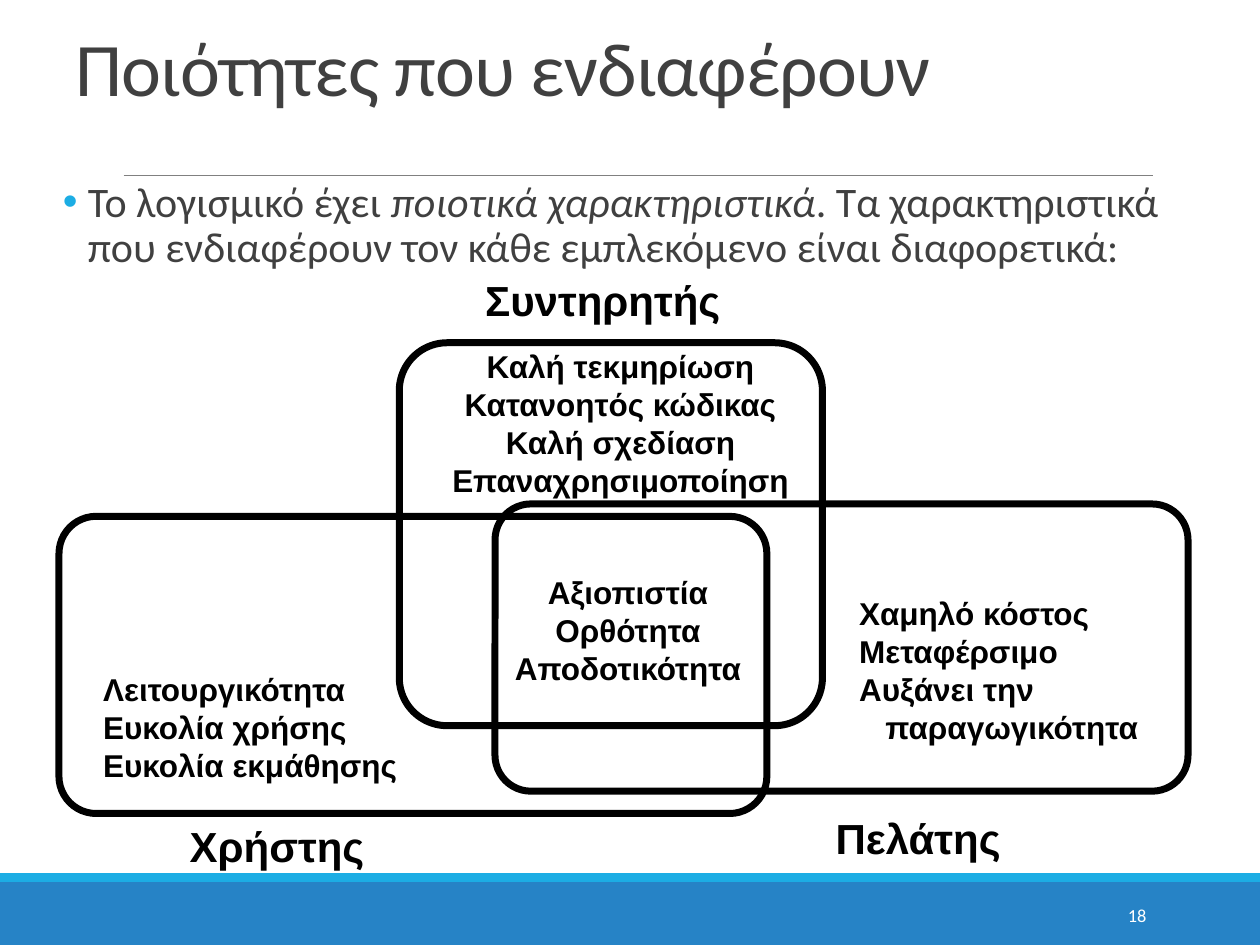
from pptx import Presentation
from pptx.dml.color import RGBColor
from pptx.enum import shapes as sh, text as tx
from pptx.oxml import parse_xml
from pptx.oxml.ns import nsdecls
from pptx.util import Cm, Pt

BLACK = RGBColor(0x00, 0x00, 0x00)
WHITE = RGBColor(0xFF, 0xFF, 0xFF)
DARK = RGBColor(0x40, 0x40, 0x40)
GREY = RGBColor(0x80, 0x80, 0x80)
BLUE = RGBColor(0x26, 0x83, 0xC6)
CYAN = RGBColor(0x1C, 0xAD, 0xE4)
LEFT, CENTER, RIGHT = tx.PP_ALIGN.LEFT, tx.PP_ALIGN.CENTER, tx.PP_ALIGN.RIGHT

prs = Presentation()
prs.slide_width, prs.slide_height = Cm(25.4), Cm(19.05)
slide = prs.slides.add_slide(prs.slide_layouts[6])


def add_text(box, lines, size, font="Arial", color=BLACK, bold=False,
             align=LEFT, anchor=tx.MSO_ANCHOR.TOP, wrap=False):
    """Each line is a list of (words, italic) runs."""
    frame = slide.shapes.add_textbox(*map(Cm, box)).text_frame
    frame.word_wrap = wrap
    if not wrap:
        frame.auto_size = tx.MSO_AUTO_SIZE.SHAPE_TO_FIT_TEXT
    frame.vertical_anchor = anchor
    for i, runs in enumerate(lines):
        para = frame.add_paragraph() if i else frame.paragraphs[0]
        para.alignment = align
        for words, italic in runs:
            run = para.add_run()
            run.text = words
            run.font.name, run.font.size = font, Pt(size)
            run.font.bold, run.font.italic = bold, italic
            run.font.color.rgb = color
    return frame


# Footer bands
for top, height, color in ((17.78, 1.27, BLUE), (17.6, 0.18, CYAN)):
    band = slide.shapes.add_shape(sh.MSO_SHAPE.RECTANGLE, 0, Cm(top),
                                  prs.slide_width, Cm(height))
    band.shadow.inherit = False
    band.fill.solid()
    band.fill.fore_color.rgb = color
    band.line.fill.background()

# Rule under the title
rule = slide.shapes.add_connector(sh.MSO_CONNECTOR.STRAIGHT, Cm(2.49), Cm(3.53),
                                  Cm(23.24), Cm(3.53))
rule.line.color.rgb = GREY
rule.line.width = Pt(0.5)
rule._element.spPr.append(parse_xml(f"<a:effectLst {nsdecls('a')}/>"))

# Title
title = add_text((1.27, 0.76, 22.86, 1.63), [[("Ποιότητες που ενδιαφέρουν", False)]],
                 43.2, "Calibri", DARK, anchor=tx.MSO_ANCHOR.BOTTOM, wrap=True)
title.paragraphs[0].line_spacing = 0.85
title.paragraphs[0].runs[0].font._element.set("spc", "-50")

# Bulleted statement
statement = add_text(
    (1.27, 3.53, 22.86, 2.18),
    [[("Το λογισμικό έχει ", False),
      ("ποιοτικά χαρακτηριστικά", True),
      (". Τα χαρακτηριστικά που ενδιαφέρουν τον κάθε εμπλεκόμενο είναι διαφορετικά:",
       False)]],
    24, "Calibri", DARK, wrap=True)
statement.margin_left = statement.margin_right = 0
bullet = statement.paragraphs[0]
bullet.line_spacing = 0.9
bullet.space_before, bullet.space_after = Pt(12), Pt(2)
bullet_props = bullet._p.get_or_add_pPr()
bullet_props.set("marL", str(Cm(0.5)))
bullet_props.set("indent", str(-Cm(0.5)))
for xml in (f'<a:buClr {nsdecls("a")}><a:srgbClr val="{CYAN}"/></a:buClr>',
            f'<a:buFont {nsdecls("a")} typeface="Arial"/>',
            f'<a:buChar {nsdecls("a")} char="•"/>'):
    bullet_props.append(parse_xml(xml))

# Slide number
add_text((20.62, 17.93, 2.74, 1.02), [[("18", False)]], 10.5, "Calibri", WHITE,
         align=RIGHT, anchor=tx.MSO_ANCHOR.MIDDLE, wrap=True)

# Overlapping areas: maintainer, customer, user
for box in ((8.05, 6.91, 8.53, 7.72), (9.98, 10.16, 13.97, 5.79),
            (1.19, 10.41, 14.27, 5.99)):
    area = slide.shapes.add_shape(sh.MSO_SHAPE.ROUNDED_RECTANGLE, *map(Cm, box))
    area.adjustments[0] = 0.125
    area.shadow.inherit = False
    area.fill.background()
    area.line.color.rgb = BLACK
    area.line.width = Pt(4)

# Names of the stakeholders
for name, box, align in (("Συντηρητής", (9.53, 5.41, 5.26, 1.27), LEFT),
                         ("Πελάτης", (16.54, 16.26, 3.94, 1.27), CENTER),
                         ("Χρήστης", (3.53, 16.41, 4.11, 1.27), CENTER)):
    add_text(box, [[(name, False)]], 24, bold=True, align=align)

# Qualities each one cares about, with the shared ones in the middle
qualities = (
    ((8.84, 6.88, 7.34, 3.3), CENTER,
     ("Καλή τεκμηρίωση", "Κατανοητός κώδικας", "Καλή σχεδίαση", "Επαναχρησιμοποίηση")),
    ((17.07, 11.86, 6.2, 3.3), LEFT,
     ("Χαμηλό κόστος", "Μεταφέρσιμο", "Αυξάνει την", "παραγωγικότητα")),
    ((10.08, 11.43, 5.16, 2.54), CENTER,
     ("Αξιοπιστία", "Ορθότητα", "Αποδοτικότητα")),
    ((1.83, 13.39, 6.45, 2.54), LEFT,
     ("Λειτουργικότητα", "Ευκολία χρήσης", "Ευκολία εκμάθησης")),
)
for box, align, lines in qualities:
    frame = add_text(box, [[(line, False)] for line in lines], 18, bold=True, align=align)
    if lines[-1] == "παραγωγικότητα":  # continues the line above
        frame.paragraphs[-1]._p.get_or_add_pPr().set("marL", str(Cm(0.53)))

prs.save("out.pptx")
